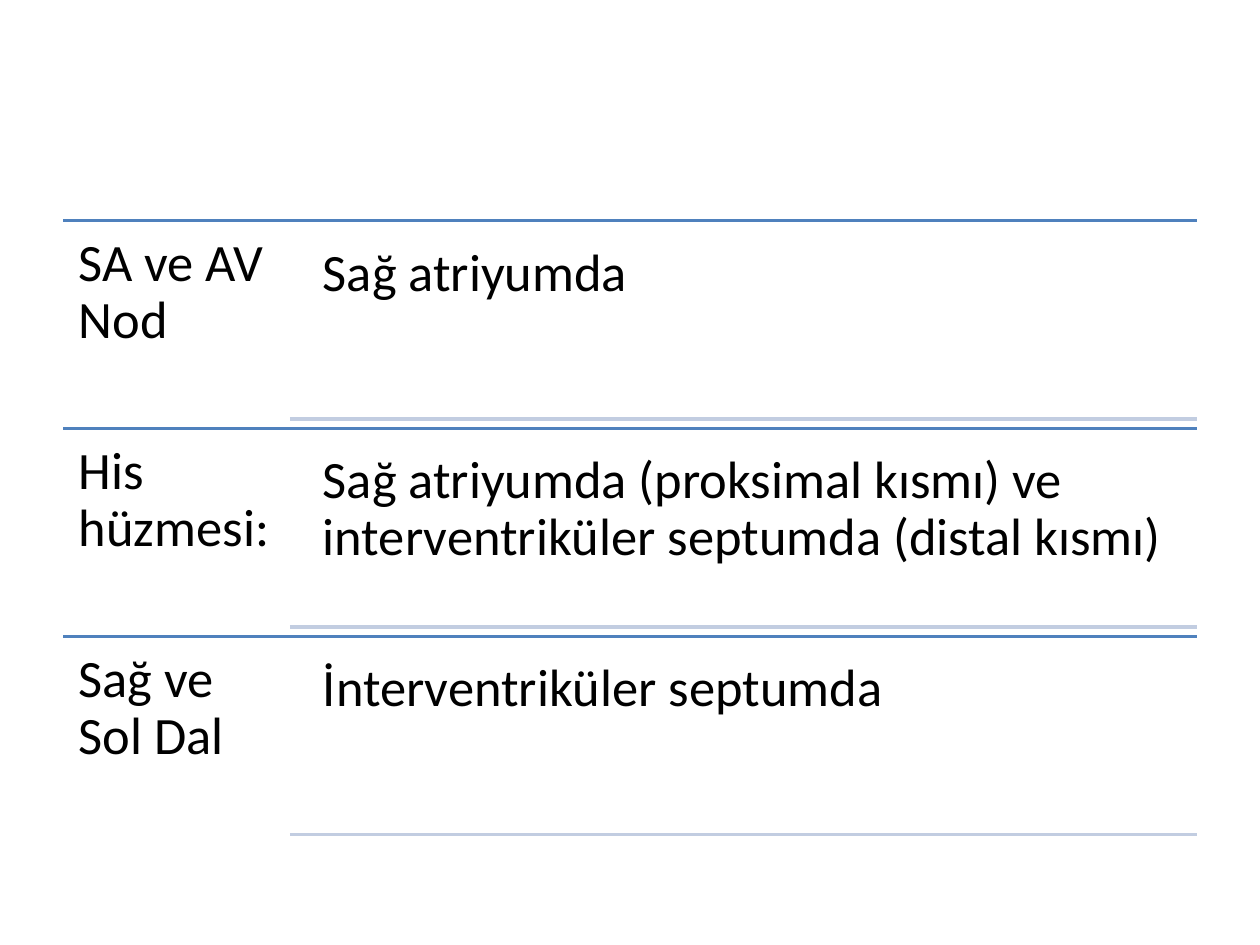
from lxml.etree import SubElement
from pptx import Presentation
from pptx.dml.color import RGBColor
from pptx.enum.shapes import MSO_CONNECTOR
from pptx.enum.text import MSO_ANCHOR
from pptx.oxml.ns import qn
from pptx.util import Pt

LEFT, RIGHT, TOP = 36, 684, 126
ROW_HEIGHT = 118.8
LABEL_WIDTH = 129.6
DETAIL_LEFT, DETAIL_WIDTH, DETAIL_HEIGHT = 175.5, 509, 108
DETAIL_GAP = 5.4

ROWS = [
    ("SA ve AV Nod", "Sağ atriyumda"),
    ("His hüzmesi:",
     "Sağ atriyumda (proksimal kısmı) ve interventriküler septumda (distal kısmı)"),
    ("Sağ ve Sol Dal", "İnterventriküler septumda"),
]


def color(hex_value):
    return RGBColor.from_string(hex_value)


def add_rule(s, left, y, hex_value):
    """Draw a horizontal rule from left to the right margin."""
    line = s.shapes.add_connector(
        MSO_CONNECTOR.STRAIGHT, Pt(left), Pt(y), Pt(RIGHT), Pt(y))
    line.line.color.rgb = color(hex_value)
    line.line.width = Pt(2)
    SubElement(line._element.spPr, qn("a:effectLst"))


def add_text(s, left, top, width, height, text):
    sp = s.shapes.add_textbox(Pt(left), Pt(top), Pt(width), Pt(height))
    tf = sp.text_frame
    tf.word_wrap = True
    tf.vertical_anchor = MSO_ANCHOR.TOP
    tf.margin_left = tf.margin_right = tf.margin_top = tf.margin_bottom = Pt(9)
    p = tf.paragraphs[0]
    p.line_spacing = 0.9
    r = p.add_run()
    r.text = text
    r.font.name = "Calibri"
    r.font.size = Pt(30)
    r.font.color.rgb = color("000000")


def add_row(s, top, label, detail):
    # Label below the main rule
    add_rule(s, LEFT, top, "4F81BD")
    add_text(s, LEFT, top, LABEL_WIDTH, ROW_HEIGHT, label)
    # Detail above the lighter rule
    detail_top = top + DETAIL_GAP
    add_text(s, DETAIL_LEFT, detail_top, DETAIL_WIDTH, DETAIL_HEIGHT, detail)
    add_rule(s, LEFT + LABEL_WIDTH, detail_top + DETAIL_HEIGHT, "C2CDE1")


def main():
    prs = Presentation()
    prs.slide_width, prs.slide_height = Pt(720), Pt(540)
    s = prs.slides.add_slide(prs.slide_layouts[6])
    for i, (label, detail) in enumerate(ROWS):
        add_row(s, TOP + i * ROW_HEIGHT, label, detail)
    prs.save("out.pptx")


if __name__ == "__main__":
    main()
